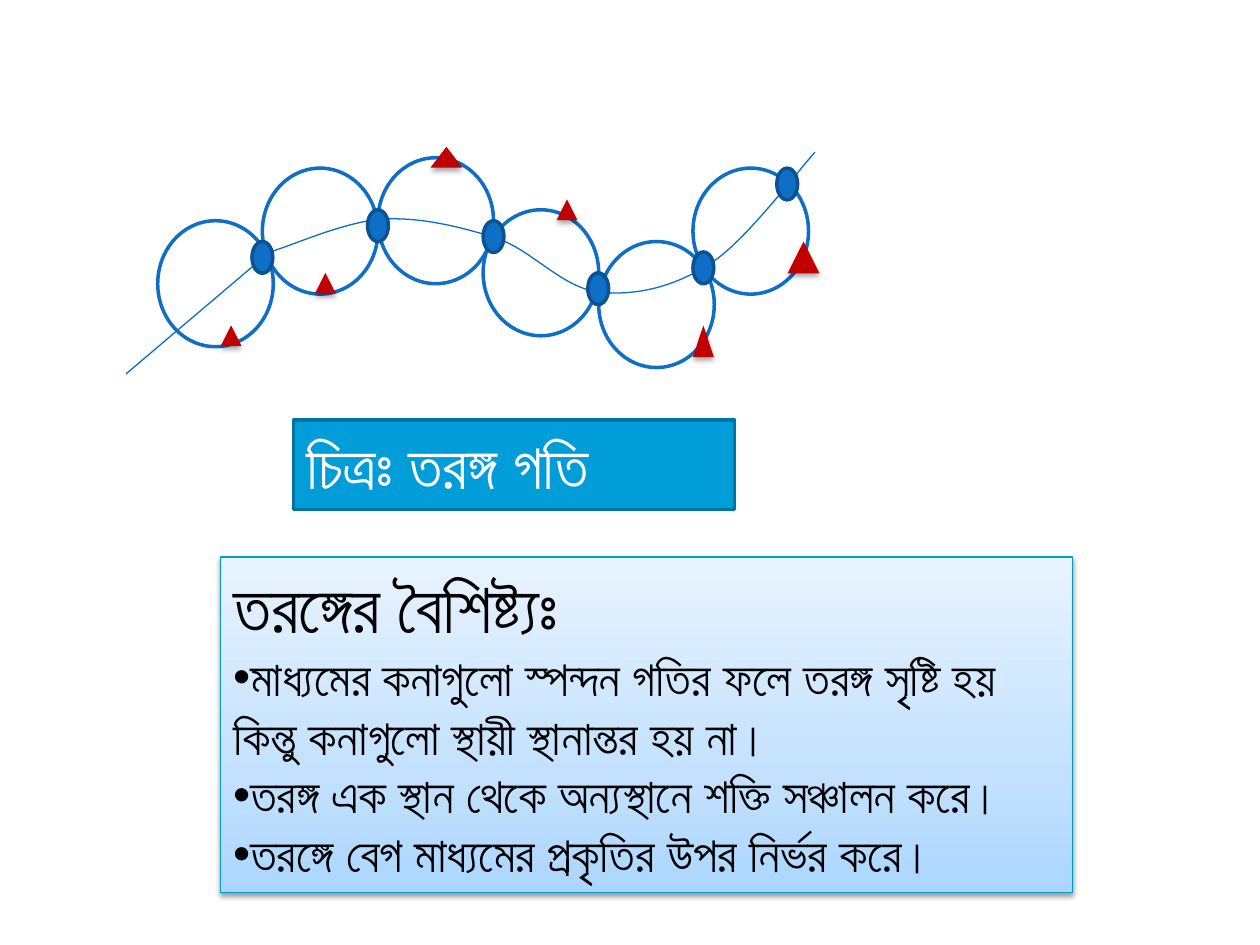
import copy

import lxml.etree
import pptx
import pptx.dml.color
import pptx.enum.shapes
import pptx.enum.text
import pptx.oxml
import pptx.oxml.ns
import pptx.util

Cm = pptx.util.Cm
Pt = pptx.util.Pt
SHAPE = pptx.enum.shapes.MSO_SHAPE
qn = pptx.oxml.ns.qn

COLORS = {
    "white": "FFFFFF", "black": "000000", "circle": "0F6FC6", "wave": "0A6DC6",
    "dot_line": "0B5292", "triangle": "C00000",
    "caption": "009DD9", "caption_line": "0074A1", "panel_line": "009AD4",
}
PANEL_GRADIENT = [(0, "ABD6FF"), (0.35, "C3E1FF"), (1, "E8F3FF")]


def style(shape, fill=None, line=None, width=0, shadow=None):
    """Set fill, line and an optional downward shadow of (opacity %, distance in points)."""
    shape.shadow.inherit = False
    if fill:
        shape.fill.solid()
        shape.fill.fore_color.rgb = pptx.dml.color.RGBColor.from_string(COLORS[fill])
    else:
        shape.fill.background()
    if line:
        shape.line.color.rgb = pptx.dml.color.RGBColor.from_string(COLORS[line])
        shape.line.width = Pt(width)
    else:
        shape.line.fill.background()
    if shadow:
        opacity, distance = shadow
        effects = shape._element.spPr.find(qn("a:effectLst"))
        outer = lxml.etree.SubElement(
            effects, qn("a:outerShdw"), blurRad=str(Pt(3.1)), dist=str(Pt(distance)),
            dir="5400000", rotWithShape="0")
        color = lxml.etree.SubElement(outer, qn("a:srgbClr"), val=COLORS["black"])
        lxml.etree.SubElement(color, qn("a:alpha"), val=str(opacity * 1000))


def add_text_panel(left, top, width, height, lines, color):
    """Add a text box from lines of (text, size, bulleted)."""
    box = slide.shapes.add_textbox(Cm(left), Cm(top), Cm(width), Cm(height))
    frame = box.text_frame
    frame.word_wrap = True
    frame.auto_size = pptx.enum.text.MSO_AUTO_SIZE.SHAPE_TO_FIT_TEXT
    for index, (text, size, bulleted) in enumerate(lines):
        paragraph = frame.paragraphs[0] if index == 0 else frame.add_paragraph()
        if bulleted:
            properties = paragraph._p.get_or_add_pPr()
            lxml.etree.SubElement(properties, qn("a:buFont"), typeface="Arial")
            lxml.etree.SubElement(properties, qn("a:buChar"), char="•")
        run = paragraph.add_run()
        run.text = text
        run.font.name = "Calibri"
        run.font.size = Pt(size)
        run.font.color.rgb = pptx.dml.color.RGBColor.from_string(COLORS[color])
    return box


presentation = pptx.Presentation()
presentation.slide_width = Cm(25.4)
presentation.slide_height = Cm(19.05)
slide = presentation.slides.add_slide(presentation.slide_layouts[6])

# Orbits of the particles
for left, top in [(3.18, 4.45), (5.29, 3.39), (7.62, 3.18),
                  (12.07, 4.87), (9.74, 4.23), (13.97, 3.39)]:
    circle = slide.shapes.add_shape(SHAPE.OVAL, Cm(left), Cm(top), Cm(2.33), Cm(2.54))
    style(circle, "white", "circle", 2)

# Wave: a straight start, then cubic Bezier pieces sampled into short lines
wave_start, curve_start = (2.54, 7.54), (5.44, 5.08)
curves = [
    [(5.82, 4.98), (6.93, 4.47), (7.7, 4.42)],
    [(8.46, 4.37), (9.27, 4.57), (10.01, 4.8)],
    [(10.74, 5.05), (11.35, 5.82), (12.09, 5.89)],
    [(12.8, 5.97), (13.59, 5.79), (14.33, 5.31)],
    [(15.04, 4.85), (16.08, 3.45), (16.43, 3.07)],
]
steps = 16
points = [curve_start]
for curve in curves:
    corners = [points[-1]] + curve
    for step in range(1, steps + 1):
        t = step / steps
        weights = [(1 - t) ** 3, 3 * t * (1 - t) ** 2, 3 * t ** 2 * (1 - t), t ** 3]
        points.append(tuple(sum(weight * corner[axis] for weight, corner in zip(weights, corners))
                            for axis in (0, 1)))
builder = slide.shapes.build_freeform(Cm(wave_start[0]), Cm(wave_start[1]))
builder.add_line_segments([(Cm(x), Cm(y)) for x, y in points], close=False)
style(builder.convert_to_shape(), None, "wave", 0.75)

# Particles on the wave
for left, top in [(5.08, 4.87), (7.41, 4.23), (9.74, 4.45),
                  (11.85, 5.5), (13.97, 5.08), (15.66, 3.39)]:
    dot = slide.shapes.add_shape(SHAPE.OVAL, Cm(left), Cm(top), Cm(0.42), Cm(0.64))
    style(dot, "circle", "dot_line", 2)

# Direction marks on the orbits
for left, top, width, height in [
        (4.45, 6.56, 0.42, 0.42), (6.35, 5.5, 0.42, 0.42), (8.68, 2.96, 0.64, 0.42),
        (11.22, 4.02, 0.42, 0.42), (13.97, 6.56, 0.42, 0.64), (15.88, 4.87, 0.64, 0.64)]:
    triangle = slide.shapes.add_shape(
        SHAPE.ISOSCELES_TRIANGLE, Cm(left), Cm(top), Cm(width), Cm(height))
    style(triangle, "triangle", shadow=(35, 1.8))

caption = add_text_panel(5.92, 8.47, 8.89, 1.8, [("চিত্রঃ তরঙ্গ গতি", 36, False)], "white")
style(caption, "caption", "caption_line", 2)

panel = add_text_panel(4.45, 11.23, 17.17, 6.76, [
    ("তরঙ্গের বৈশিষ্ট্যঃ", 40, False),
    ("মাধ্যমের কনাগুলো স্পন্দন গতির ফলে তরঙ্গ সৃষ্টি হয় কিন্তু কনাগুলো স্থায়ী স্থানান্তর হয় না।", 28, True),
    ("তরঙ্গ এক স্থান থেকে অন্যস্থানে শক্তি সঞ্চালন করে।", 28, True),
    ("তরঙ্গে বেগ মাধ্যমের প্রকৃতির উপর নির্ভর করে।", 28, True),
], "black")
style(panel, None, "panel_line", 0.75, shadow=(38, 1.6))
panel.fill.gradient()
panel.fill.gradient_angle = 90
stop_list = panel._element.spPr.find(qn("a:gradFill")).find(qn("a:gsLst"))
stop_list.append(copy.deepcopy(stop_list[0]))
for stop, (position, color) in zip(panel.fill.gradient_stops, PANEL_GRADIENT):
    stop.position = position
    stop.color.rgb = pptx.dml.color.RGBColor.from_string(color)

presentation.save("out.pptx")
